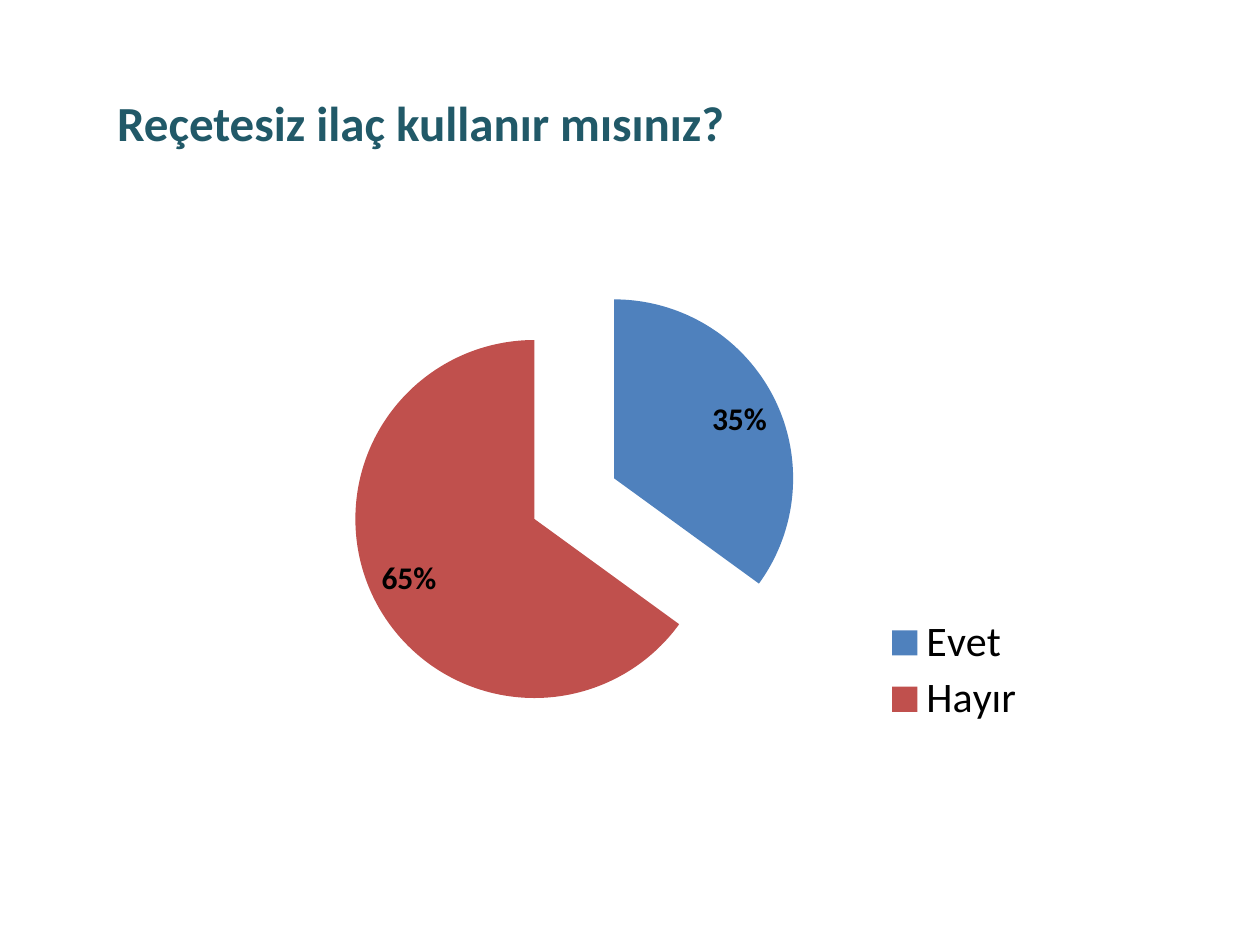
import pptx
import pptx.chart.data
import pptx.dml.color
import pptx.enum.chart
import pptx.enum.text
import pptx.oxml
import pptx.oxml.ns
import pptx.util
from pptx.util import Inches

FONT = "Calibri"
QUESTION = "Reçetesiz ilaç kullanır mısınız?"
ANSWERS = [("Evet", 0.35, "4F81BD"), ("Hayır", 0.65, "C0504D")]
PLOT_AREA = {"x": 0.018, "y": 0.147, "w": 0.83, "h": 0.8}
LEGEND_AREA = {"x": 0.78, "y": 0.75, "w": 0.21, "h": 0.21}
EXPLOSION = 25


def color(hex_code):
    """Return the RGB colour for a hex string."""
    return pptx.dml.color.RGBColor.from_string(hex_code)


def style_font(font, size, hex_code, bold=False):
    """Set the face, size, colour and weight of a font."""
    font.name = FONT
    font.size = pptx.util.Pt(size)
    font.bold = bold
    font.color.rgb = color(hex_code)


def chart_xml(tag, content="", value=None):
    """Return a chart element with the given content or value."""
    attribute = "" if value is None else f' val="{value}"'
    return pptx.oxml.parse_xml(
        f'<c:{tag} {pptx.oxml.ns.nsdecls("c")}{attribute}>{content}</c:{tag}>'
    )


def place(element, index, area, target=""):
    """Give a chart part a manual layout in fractions of the chart."""
    for old in element.findall(pptx.oxml.ns.qn("c:layout")):
        element.remove(old)
    modes = "".join(f'<c:{axis}Mode val="edge"/>' for axis in "xy")
    sizes = "".join(f'<c:{side} val="{value}"/>' for side, value in area.items())
    layout = f"<c:manualLayout>{target}{modes}{sizes}</c:manualLayout>"
    element.insert(index, chart_xml("layout", layout))


def add_question(page):
    """Write the question in the title placeholder."""
    box = page.shapes.title
    box.left, box.top = Inches(0.83), Inches(0.36)
    box.width, box.height = Inches(6.54), Inches(1.27)
    frame = box.text_frame
    frame.text = QUESTION
    frame.word_wrap = True
    frame.auto_size = pptx.enum.text.MSO_AUTO_SIZE.NONE
    frame.vertical_anchor = pptx.enum.text.MSO_ANCHOR.BOTTOM
    frame.margin_bottom = Inches(0.43)
    para = frame.paragraphs[0]
    para.alignment = pptx.enum.text.PP_ALIGN.LEFT
    style_font(para.font, 28, "215968", bold=True)


def add_answers(page):
    """Draw the answers as an exploded pie."""
    data = pptx.chart.data.CategoryChartData(number_format="0%")
    data.categories = [name for name, _, _ in ANSWERS]
    data.add_series("Series 1", [share for _, share, _ in ANSWERS])
    chart = page.shapes.add_chart(
        pptx.enum.chart.XL_CHART_TYPE.PIE,
        Inches(1.67), Inches(1.53), Inches(6.67), Inches(4.44), data,
    ).chart
    chart.has_title = False
    style_font(chart.font, 18, "000000")

    plot = chart.plots[0]
    plot.vary_by_categories = True
    series = plot.series[0]
    series_name = series._element.find(pptx.oxml.ns.qn("c:tx"))
    series_name.addnext(chart_xml("explosion", value=EXPLOSION))
    for index, (_, _, fill_color) in enumerate(ANSWERS):
        fill = series.points[index].format.fill
        fill.solid()
        fill.fore_color.rgb = color(fill_color)

    plot.has_data_labels = True
    labels = plot.data_labels
    labels.show_value = True
    labels.show_percentage = False
    labels.number_format = "0%"
    labels.number_format_is_linked = False
    labels.position = pptx.enum.chart.XL_LABEL_POSITION.INSIDE_END
    style_font(labels.font, 18, "000000", bold=True)

    chart.has_legend = True
    legend = chart.legend
    legend.position = pptx.enum.chart.XL_LEGEND_POSITION.RIGHT
    legend.include_in_layout = False
    style_font(legend.font, 24, "000000")
    place(legend._element, 1, LEGEND_AREA)
    plot_area = plot._element.getparent()
    place(plot_area, 0, PLOT_AREA, '<c:layoutTarget val="inner"/>')


def main():
    """Build and save the slide."""
    deck = pptx.Presentation()
    deck.slide_width, deck.slide_height = Inches(10), Inches(7.5)
    page = deck.slides.add_slide(deck.slide_layouts[5])
    add_answers(page)
    add_question(page)
    deck.save("out.pptx")


if __name__ == "__main__":
    main()
